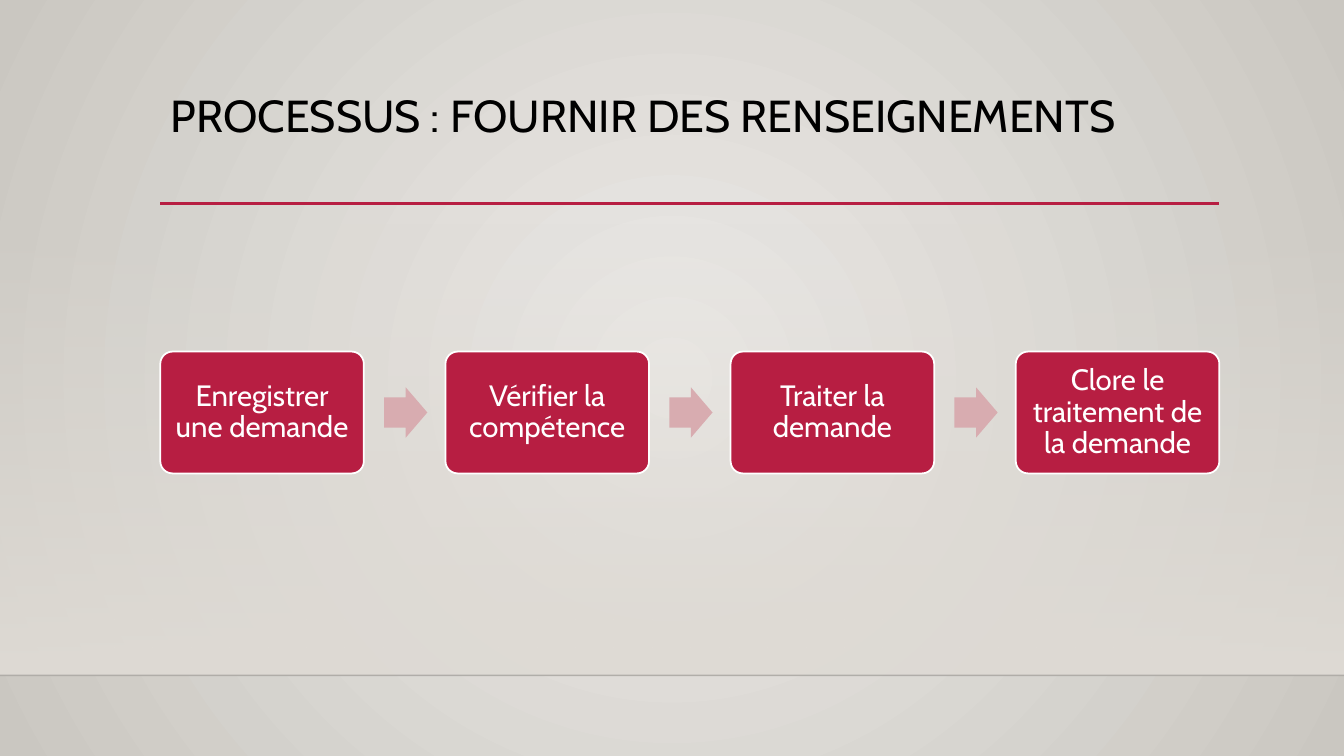
"""Build the slide showing the four steps of the information process."""
from lxml.etree import SubElement
from pptx import Presentation
from pptx.dml.color import RGBColor
from pptx.enum.shapes import MSO_CONNECTOR, MSO_SHAPE
from pptx.enum.text import MSO_ANCHOR, PP_ALIGN
from pptx.oxml.ns import qn
from pptx.util import Cm, Pt

FONT = "Cabin"
BLACK = RGBColor(0x00, 0x00, 0x00)
WHITE = RGBColor(0xFF, 0xFF, 0xFF)
CRIMSON = RGBColor(0xB7, 0x1E, 0x42)
PINK = RGBColor(0xD8, 0xAC, 0xB0)
PALE = RGBColor(0xEC, 0xEA, 0xE7)
STONE = RGBColor(0xCA, 0xC7, 0xC1)
SAND = RGBColor(0xDF, 0xDB, 0xD5)

SLIDE_W, SLIDE_H = 33.87, 19.05
LEFT, RIGHT = 4.04, 30.73
FLOOR = 17.02
BOX_W, BOX_H, BOX_TOP = 5.13, 3.07, 8.86
ARROW_W, ARROW_H, ARROW_GAP = 1.09, 1.27, 0.51
STEPS = [
    "Enregistrer une demande",
    "Vérifier la compétence",
    "Traiter la demande",
    "Clore le traitement de la demande",
]
PITCH = (RIGHT - LEFT - BOX_W) / (len(STEPS) - 1)


def set_gradient(fill, start, end):
    """Give a fill a gradient between two colours."""
    fill.gradient()
    for stop, color in zip(fill.gradient_stops, (start, end)):
        stop.color.rgb = color


def set_alpha(element, percent):
    """Set the opacity of the first colour found in an element."""
    color = element.find(".//" + qn("a:srgbClr"))
    SubElement(color, qn("a:alpha"), val=str(percent * 1000))


def add_background(s):
    """Fill the slide with a circular gradient."""
    set_gradient(s.background.fill, PALE, STONE)
    gradient = s.element.find(".//" + qn("a:gradFill"))
    gradient.remove(gradient.find(qn("a:lin")))
    circle = SubElement(gradient, qn("a:path"), path="circle")
    SubElement(circle, qn("a:fillToRect"), l="50000", t="50000", r="50000", b="50000")


def add_shape(s, kind, left, top, width, height):
    """Add a preset shape without shadow or outline."""
    sp = s.shapes.add_shape(kind, Cm(left), Cm(top), Cm(width), Cm(height))
    sp.shadow.inherit = False
    sp.line.fill.background()
    return sp


def add_wall(s):
    """Add the band that fades in down to the floor line."""
    top = 5.61
    sp = add_shape(s, MSO_SHAPE.RECTANGLE, 0, top, SLIDE_W, FLOOR - top)
    set_gradient(sp.fill, SAND, SAND)
    sp.fill.gradient_angle = 270
    set_alpha(sp.fill.gradient_stops[0]._gs, 0)


def add_rule(s, left, right, y, color, width):
    """Add a horizontal line."""
    line = s.shapes.add_connector(MSO_CONNECTOR.STRAIGHT, Cm(left), Cm(y), Cm(right), Cm(y))
    line.line.color.rgb = color
    line.line.width = Pt(width)
    SubElement(line._element.spPr, qn("a:effectLst"))
    return line


def set_text(tf, text, size, color, align, anchor):
    """Write one paragraph in a text frame."""
    tf.word_wrap = True
    tf.vertical_anchor = anchor
    p = tf.paragraphs[0]
    p.text = text
    p.alignment = align
    p.line_spacing = 0.9
    p.font.name = FONT
    p.font.size = Pt(size)
    p.font.color.rgb = color


def add_title(s, text):
    """Place and format the title placeholder."""
    title = s.shapes.title
    title.left, title.top = Cm(LEFT), Cm(2.24)
    title.width, title.height = Cm(26.67), Cm(2.92)
    set_text(title.text_frame, text, 32, BLACK, PP_ALIGN.LEFT, MSO_ANCHOR.TOP)


def add_step(s, left, text):
    """Add a rounded box for one step."""
    sp = add_shape(s, MSO_SHAPE.ROUNDED_RECTANGLE, left, BOX_TOP, BOX_W, BOX_H)
    sp.adjustments[0] = 0.1
    sp.fill.solid()
    sp.fill.fore_color.rgb = CRIMSON
    sp.line.color.rgb = WHITE
    sp.line.width = Pt(1.25)
    tf = sp.text_frame
    tf.margin_left = tf.margin_right = tf.margin_top = tf.margin_bottom = Cm(0.23)
    set_text(tf, text, 21, WHITE, PP_ALIGN.CENTER, MSO_ANCHOR.MIDDLE)


def add_arrow(s, left):
    """Add an arrow centred on the height of the boxes."""
    top = BOX_TOP + (BOX_H - ARROW_H) / 2
    sp = add_shape(s, MSO_SHAPE.RIGHT_ARROW, left, top, ARROW_W, ARROW_H)
    sp.adjustments[0] = 0.6
    sp.adjustments[1] = 0.5
    sp.fill.solid()
    sp.fill.fore_color.rgb = PINK


def main():
    """Build and save the presentation."""
    prs = Presentation()
    prs.slide_width, prs.slide_height = Cm(SLIDE_W), Cm(SLIDE_H)
    s = prs.slides.add_slide(prs.slide_layouts[5])
    add_background(s)
    add_wall(s)
    floor = add_rule(s, 0, SLIDE_W, FLOOR, BLACK, 1)
    set_alpha(floor.line._ln, 20)
    add_rule(s, LEFT, RIGHT, 5.13, CRIMSON, 2.5)
    add_title(s, "PROCESSUS : FOURNIR DES RENSEIGNEMENTS")
    for i, step in enumerate(STEPS):
        left = LEFT + i * PITCH
        if i:
            add_arrow(s, left - PITCH + BOX_W + ARROW_GAP)
        add_step(s, left, step)
    prs.save("out.pptx")


if __name__ == "__main__":
    main()
